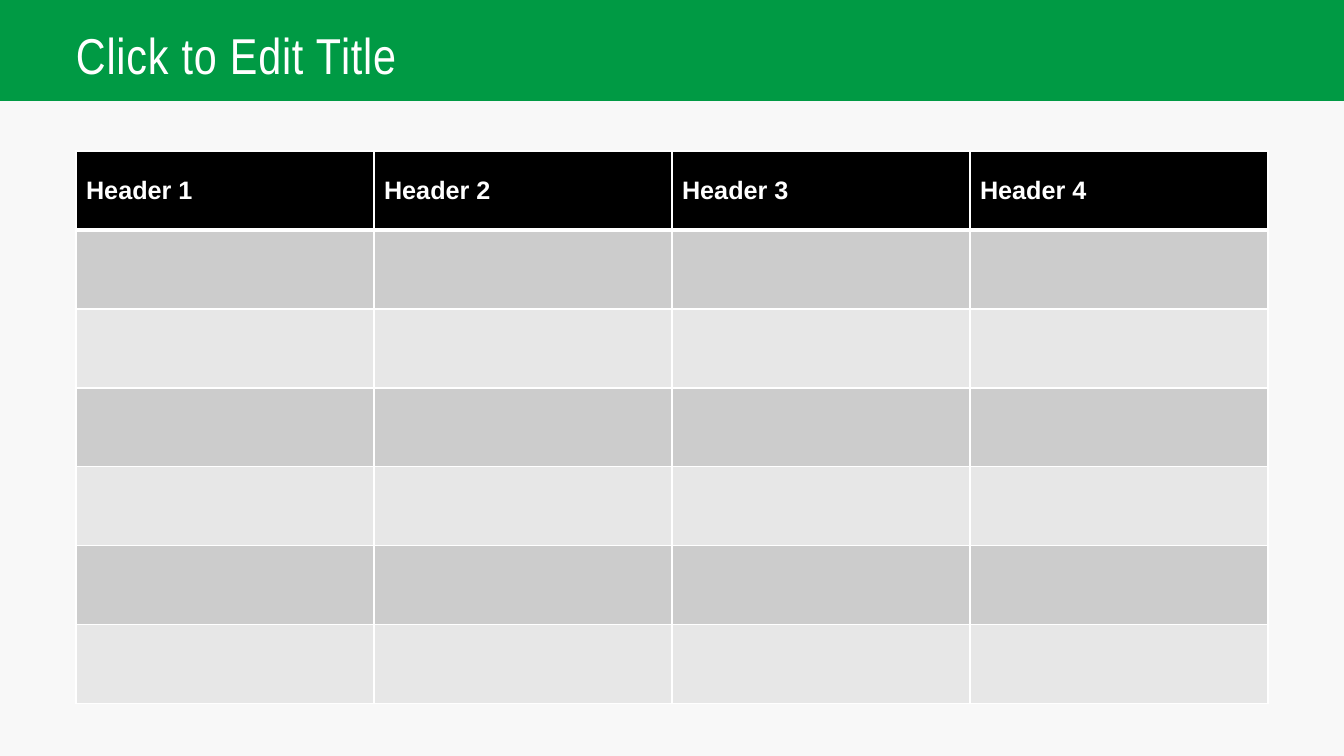
from lxml import etree
from pptx import Presentation
from pptx.dml.color import RGBColor
from pptx.enum.shapes import MSO_SHAPE
from pptx.enum.text import MSO_ANCHOR
from pptx.oxml.ns import qn
from pptx.util import Pt

RECTANGLE = MSO_SHAPE.RECTANGLE
MIDDLE = MSO_ANCHOR.MIDDLE
EMU_PER_PX = 914400 / 100.8
WHITE = "FFFFFF"


def px(length):
    return round(length * EMU_PER_PX)


def paint(fill, color):
    fill.solid()
    fill.fore_color.rgb = RGBColor.from_string(color)


prs = Presentation()
prs.slide_width, prs.slide_height = px(1344), px(756)
slide = prs.slides.add_slide(prs.slide_layouts[6])
paint(slide.background.fill, "F8F8F8")

banner = slide.shapes.add_shape(RECTANGLE, 0, 0, px(1344), px(101))
banner.shadow.inherit = False
paint(banner.fill, "009A44")
banner.line.fill.background()

title = slide.shapes.add_textbox(px(76), 0, px(1008), px(101)).text_frame
title.word_wrap = True
title.vertical_anchor = MIDDLE
title.margin_left = title.margin_right = title.margin_bottom = 0
title.margin_top = px(15)
heading = title.paragraphs[0]
heading.text = "Click to Edit Title"
heading.line_spacing = 0.9
heading.font.name = "Arial Narrow"
heading.font.size = Pt(36)
paint(heading.font.fill, WHITE)
heading.runs[0].font._element.set("spc", "60")

HEADERS = ["Header 1", "Header 2", "Header 3", "Header 4"]
ROW_FILLS = ["000000"] + ["CCCCCC", "E7E7E7"] * 3
COLUMN_WIDTH, ROW_HEIGHT = 298, 79

grid = slide.shapes.add_table(
    len(ROW_FILLS), len(HEADERS), px(76), px(151),
    px(COLUMN_WIDTH * len(HEADERS)), px(ROW_HEIGHT * len(ROW_FILLS))).table
for column in grid.columns:
    column.width = px(COLUMN_WIDTH)

for row_index, row_fill in enumerate(ROW_FILLS):
    grid.rows[row_index].height = px(ROW_HEIGHT)
    for cell in grid.rows[row_index].cells:
        cell.vertical_anchor = MIDDLE
        properties = cell._tc.get_or_add_tcPr()
        for side in ("lnL", "lnR", "lnT", "lnB"):
            under_header = (row_index, side) in ((0, "lnB"), (1, "lnT"))
            border = etree.SubElement(properties, qn("a:" + side),
                                      w=str(Pt(3 if under_header else 1)))
            border_fill = etree.SubElement(border, qn("a:solidFill"))
            etree.SubElement(border_fill, qn("a:srgbClr"), val=WHITE)
        paint(cell.fill, row_fill)

for cell, header in zip(grid.rows[0].cells, HEADERS):
    cell.text = header
    label = cell.text_frame.paragraphs[0]
    label.font.name = "Arial"
    label.font.size = Pt(18)
    label.font.bold = True
    paint(label.font.fill, WHITE)

prs.save("out.pptx")
